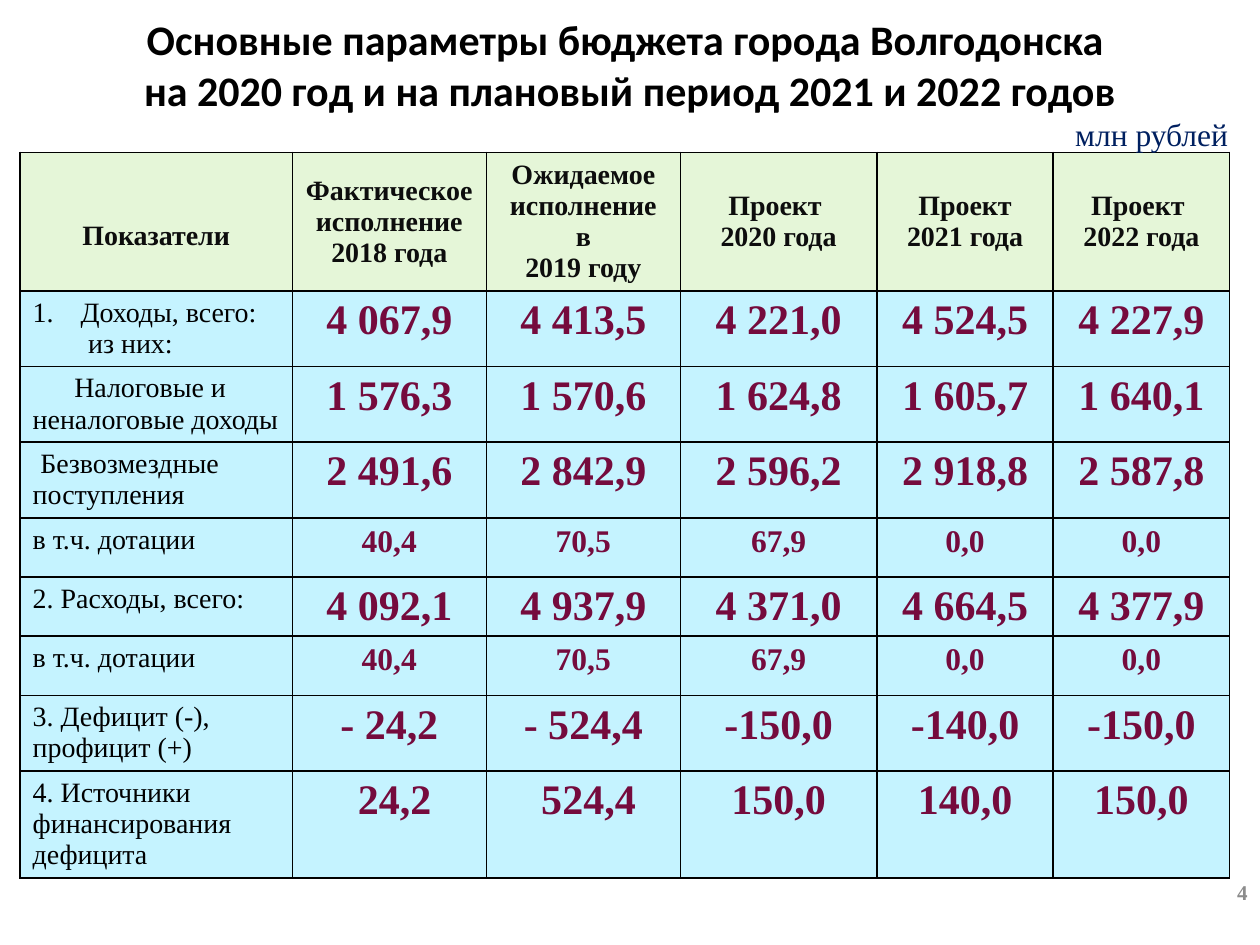
from dataclasses import dataclass

from lxml import etree
from pptx import Presentation
from pptx import util as u
from pptx.dml.color import RGBColor
from pptx.enum import text
from pptx.oxml import ns

CENTER, RIGHT, LEFT = text.PP_ALIGN.CENTER, text.PP_ALIGN.RIGHT, text.PP_ALIGN.LEFT
TOP, MIDDLE = text.MSO_ANCHOR.TOP, text.MSO_ANCHOR.MIDDLE


@dataclass(frozen=True)
class Theme:
    heading_font: str = "Calibri"
    body_font: str = "Times New Roman"
    black: str = "000000"
    header_text: str = "0D0D0D"
    value: str = "750B3D"
    unit: str = "002060"
    number: str = "8C8C8C"
    header_fill: str = "E5F6D8"
    body_fill: str = "C5F3FF"
    large: int = 24
    medium: int = 18
    label: int = 16
    small: int = 12


COLUMNS = [2.16, 1.54, 1.54, 1.56, 1.4, 1.4]
HEADERS = [
    ["Показатели"],
    ["Фактическое исполнение 2018 года"],
    ["Ожидаемое исполнение в", "2019 году"],
    ["Проект ", "2020 года"],
    ["Проект", "2021 года"],
    ["Проект ", "2022 года"],
]
GRANTS = (0.47, [("в т.ч. дотации", 0, 0)], ["40,4", "70,5", "67,9", "0,0", "0,0"], "medium")
# Each row: height, label lines (wording, left margin, first-line indent), values, value size
ROWS = [
    (0.6, [("Доходы, всего:", 0.38, -0.38), ("из них:", 0.44, 0)],
     ["4 067,9", "4 413,5", "4 221,0", "4 524,5", "4 227,9"], "large"),
    (0.6, [("Налоговые и неналоговые доходы", 0, 0.33)],
     ["1 576,3", "1 570,6", "1 624,8", "1 605,7", "1 640,1"], "large"),
    (0.6, [("Безвозмездные поступления", 0, 0.06)],
     ["2 491,6", "2 842,9", "2 596,2", "2 918,8", "2 587,8"], "large"),
    GRANTS,
    (0.47, [("2. Расходы, всего:", 0, 0)],
     ["4 092,1", "4 937,9", "4 371,0", "4 664,5", "4 377,9"], "large"),
    GRANTS,
    (0.6, [("3. Дефицит (-), профицит (+)", 0, 0)],
     ["- 24,2", "- 524,4", "-150,0", "-140,0", "-150,0"], "large"),
    (0.85, [("4. Источники финансирования дефицита", 0, 0)],
     [" 24,2", " 524,4", "150,0", "140,0", "150,0"], "large"),
]


class SlideBuilder:
    """Holds the theme and the current slide and adds elements to it."""

    def __init__(self, prs, theme):
        self.theme = theme
        self.s = prs.slides.add_slide(prs.slide_layouts[5])

    def run(self, p, words, size, color, bold=False, font=None):
        r = p.add_run()
        r.text = words
        r.font.name = font or self.theme.body_font
        r.font.size = u.Pt(size)
        r.font.bold = bold
        r.font.color.rgb = RGBColor.from_string(color)

    def lines(self, tf, lines, align, *style):
        for i, line in enumerate(lines):
            p = tf.add_paragraph() if i else tf.paragraphs[0]
            p.alignment = align
            self.run(p, line, *style)

    def title(self, box, lines):
        sp = self.s.shapes.title
        sp.left, sp.top, sp.width, sp.height = map(u.Inches, box)
        tf = sp.text_frame
        tf.vertical_anchor = MIDDLE
        p = tf.paragraphs[0]
        p.alignment = CENTER
        for i, line in enumerate(lines):
            if i:
                p.add_line_break()
            self.run(p, line, self.theme.large, self.theme.black, True, self.theme.heading_font)

    def textbox(self, box, words, align, anchor, *style):
        tf = self.s.shapes.add_textbox(*map(u.Inches, box)).text_frame
        tf.word_wrap = True
        tf.vertical_anchor = anchor
        self.lines(tf, [words], align, *style)

    def table(self, left, top, columns, heights):
        frame = self.s.shapes.add_table(
            len(heights), len(columns), u.Inches(left), u.Inches(top),
            u.Inches(sum(columns)), u.Inches(sum(heights)))
        for column, width in zip(frame.table.columns, columns):
            column.width = u.Inches(width)
        for row, height in zip(frame.table.rows, heights):
            row.height = u.Inches(height)
        return frame.table

    def cell(self, cell, fill, anchor=TOP):
        cell.vertical_anchor = anchor
        tc_pr = cell._tc.get_or_add_tcPr()
        for side in ("lnL", "lnR", "lnT", "lnB"):
            ln = etree.SubElement(tc_pr, ns.qn(f"a:{side}"), w=str(u.Pt(1)))
            solid = etree.SubElement(ln, ns.qn("a:solidFill"))
            etree.SubElement(solid, ns.qn("a:srgbClr"), val=self.theme.black)
        cell.fill.solid()
        cell.fill.fore_color.rgb = RGBColor.from_string(fill)
        return cell.text_frame

    def label(self, tf, lines):
        self.lines(tf, [line[0] for line in lines], LEFT, self.theme.label, self.theme.black)
        for p, (_, margin, indent) in zip(tf.paragraphs, lines):
            p_pr = p._p.get_or_add_pPr()
            p_pr.set("marL", str(u.Inches(margin)))
            p_pr.set("indent", str(u.Inches(indent)))
            if indent < 0:
                etree.SubElement(p_pr, ns.qn("a:buFont"), typeface="+mj-lt")
                etree.SubElement(p_pr, ns.qn("a:buAutoNum"), type="arabicPeriod")


def main():
    prs = Presentation()
    prs.slide_width, prs.slide_height = u.Inches(10), u.Inches(7.5)
    theme = Theme()
    slide = SlideBuilder(prs, theme)

    slide.title((0.5, 0, 9, 1.02), ["Основные параметры бюджета города Волгодонска ",
                                    "на 2020 год и на плановый период 2021 и 2022 годов"])

    table = slide.table(0.16, 1.21, COLUMNS, [1.1] + [row[0] for row in ROWS])
    for col, lines in enumerate(HEADERS):
        tf = slide.cell(table.cell(0, col), theme.header_fill, MIDDLE if col else TOP)
        slide.lines(tf, lines, CENTER, theme.label, theme.header_text, True)
    table.cell(0, 0).margin_top = u.Inches(0.54)

    for row, (_, label, values, size) in enumerate(ROWS, 1):
        slide.label(slide.cell(table.cell(row, 0), theme.body_fill), label)
        for col, value in enumerate(values, 1):
            tf = slide.cell(table.cell(row, col), theme.body_fill)
            slide.lines(tf, [value], CENTER, getattr(theme, size), theme.value, True)

    slide.textbox((9.53, 6.88, 0.47, 0.4), "4", RIGHT, MIDDLE, theme.small, theme.number, True)
    slide.textbox((8.28, 0.86, 1.72, 1.01), "млн рублей", CENTER, TOP, theme.medium, theme.unit)
    prs.save("out.pptx")


if __name__ == "__main__":
    main()
